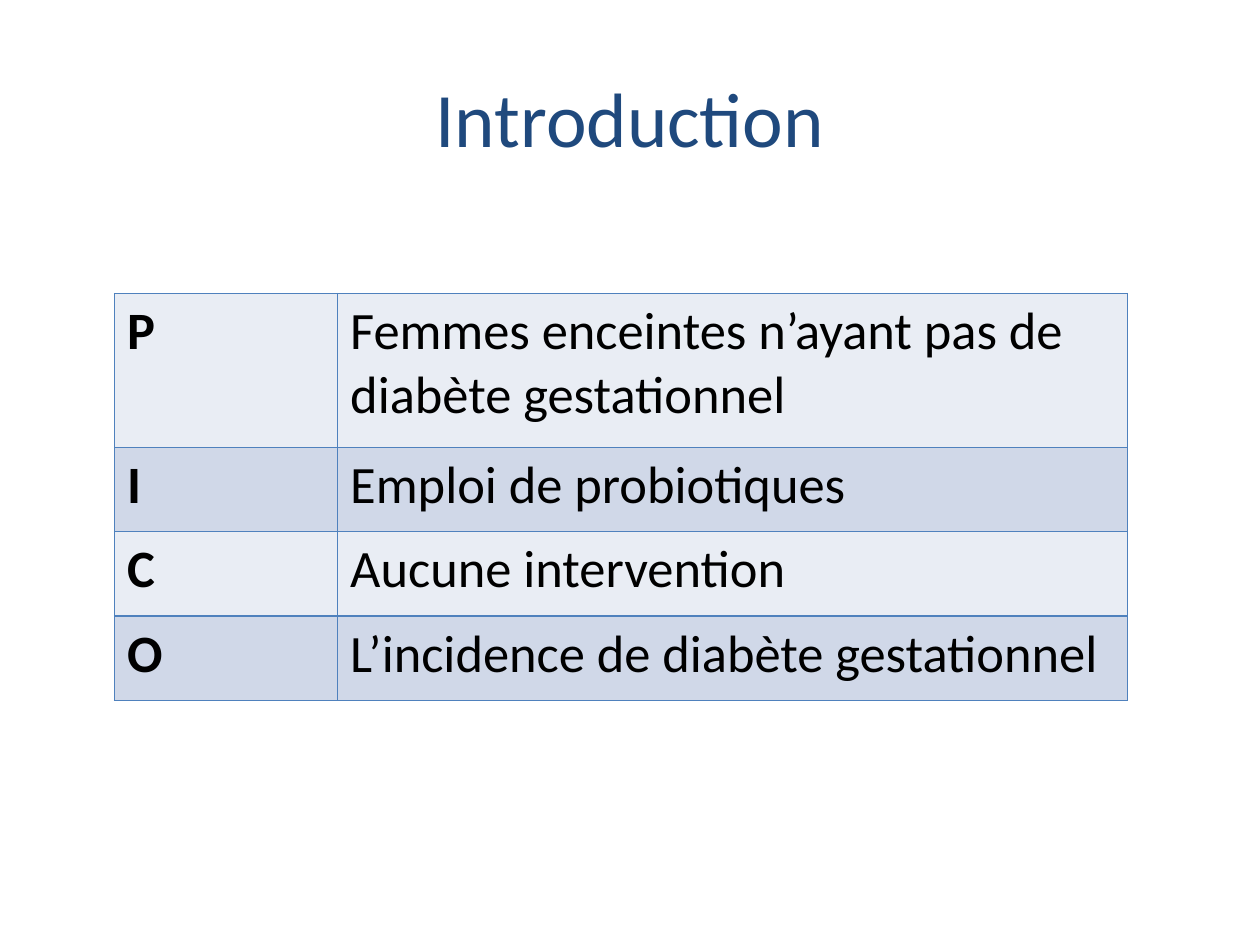
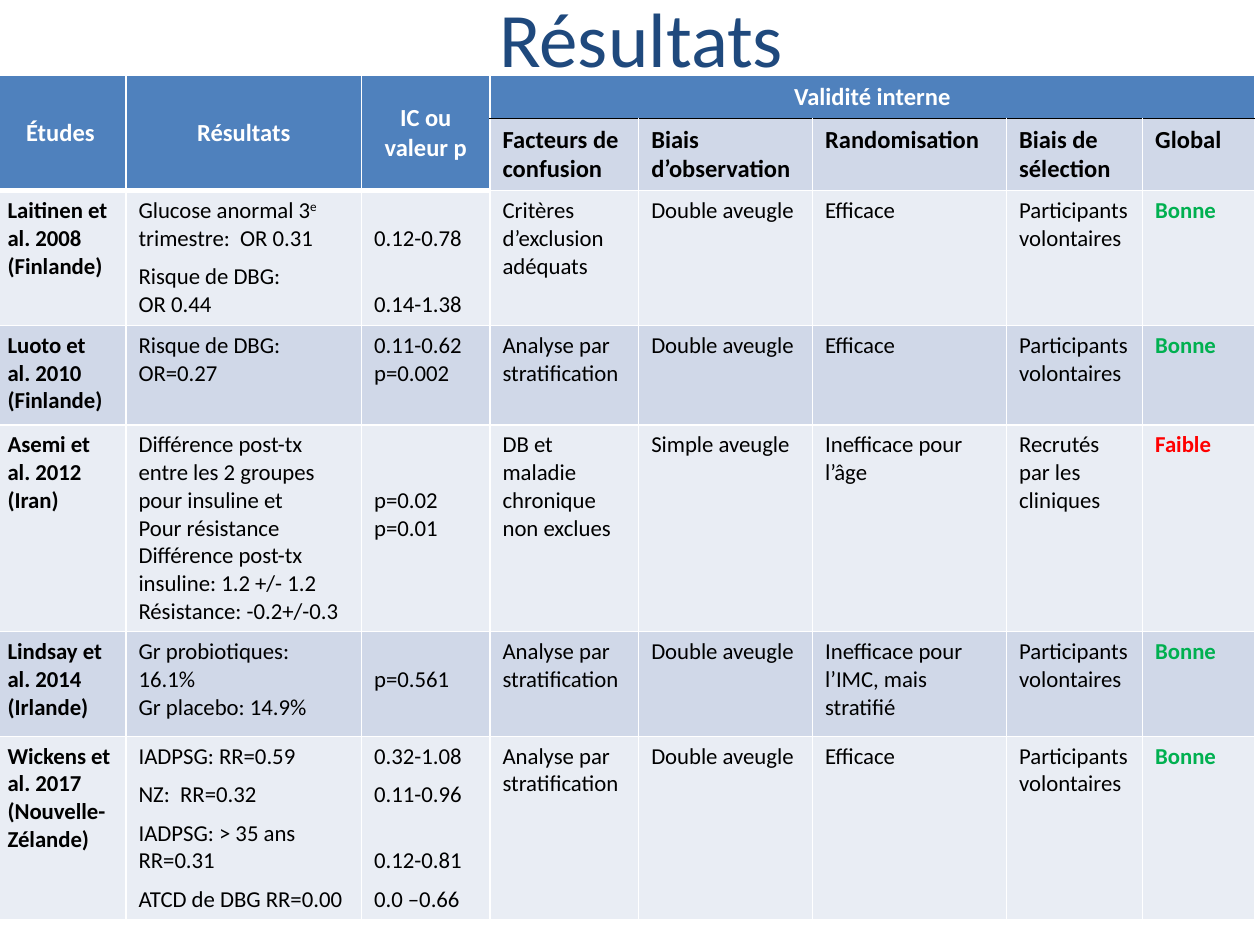
from typing import NamedTuple

from lxml.etree import SubElement
from pptx import Presentation
from pptx.dml.color import RGBColor
from pptx.enum.text import MSO_ANCHOR as Anchor, PP_ALIGN as Align
from pptx.oxml.ns import qn
from pptx.util import Inches, Pt

FONT = "Calibri"
NAVY, BLUE, BLACK, WHITE = "1F497D", "4F81BD", "000000", "FFFFFF"
GREEN, RED = "00B050", "FF0000"
BANDS = ("E9EDF4", "D0D8E8")
FULL_GAP, SMALL_GAP = 15.9, 6.1  # points: one line of body text, a thin break
CELL_TOP = 0.05


class Line(NamedTuple):
    text: str
    gap: float = 0


class Border(NamedTuple):
    color: str
    width: float = 1


class Study(NamedTuple):
    name: str
    country: str
    results: list[Line]
    intervals: list[Line]
    confounding: str
    observation: str
    randomisation: str
    selection: str
    overall: str


PICO = [
    ("P", "Femmes enceintes n’ayant pas de diabète gestationnel"),
    ("I", "Emploi de probiotiques"),
    ("C", "Aucune intervention"),
    ("O", "L’incidence de diabète gestationnel"),
]

MAIN_HEADS = ["Études", "Résultats", "IC ou\nvaleur p"]
VALIDITY_HEADS = ["Facteurs de confusion", "Biais d’observation", "Randomisation",
                  "Biais de sélection", "Global"]
STRATIFIED = "Analyse par stratification"
DOUBLE_BLIND = "Double aveugle"
VOLUNTEERS = "Participants volontaires"
GOOD, WEAK = "Bonne", "Faible"
RATING_COLORS = {GOOD: GREEN, WEAK: RED}

STUDIES = [
    Study("Laitinen et al. 2008", "(Finlande)",
          [Line("Glucose anormal 3^e^ trimestre:  OR 0.31"),
           Line("Risque de DBG:", SMALL_GAP), Line("OR 0.44")],
          [Line("0.12-0.78", FULL_GAP), Line("0.14-1.38", SMALL_GAP + FULL_GAP)],
          "Critères d’exclusion adéquats", DOUBLE_BLIND, "Efficace", VOLUNTEERS, GOOD),
    Study("Luoto et al. 2010", "(Finlande)",
          [Line("Risque de DBG: OR=0.27")],
          [Line("0.11-0.62"), Line("p=0.002")],
          STRATIFIED, DOUBLE_BLIND, "Efficace", VOLUNTEERS, GOOD),
    Study("Asemi et al. 2012", "(Iran)",
          [Line("Différence post-tx entre les 2 groupes pour insuline et"),
           Line("Pour résistance"),
           Line("Différence post-tx insuline: 1.2 +/- 1.2"),
           Line("Résistance: -0.2+/-0.3")],
          [Line("p=0.02", 2 * FULL_GAP), Line("p=0.01")],
          "DB et maladie chronique non exclues", "Simple aveugle",
          "Inefficace pour l’âge", "Recrutés par les cliniques", WEAK),
    Study("Lindsay et al. 2014", "(Irlande)",
          [Line("Gr probiotiques: 16.1%"), Line("Gr placebo: 14.9%")],
          [Line("p=0.561", FULL_GAP)],
          STRATIFIED, DOUBLE_BLIND, "Inefficace pour l’IMC, mais stratifié",
          VOLUNTEERS, GOOD),
    Study("Wickens et al. 2017", "(Nouvelle-Zélande)",
          [Line("IADPSG: RR=0.59"), Line("NZ:  RR=0.32", SMALL_GAP),
           Line("IADPSG: > 35 ans RR=0.31", SMALL_GAP),
           Line("ATCD de DBG RR=0.00", SMALL_GAP)],
          [Line("0.32-1.08"), Line("0.11-0.96", SMALL_GAP),
           Line("0.12-0.81", SMALL_GAP + FULL_GAP), Line("0.0 –0.66", SMALL_GAP)],
          STRATIFIED, DOUBLE_BLIND, "Efficace", VOLUNTEERS, GOOD),
]


def rgb(color: str) -> RGBColor:
    return RGBColor.from_string(color)


def write(tf, text: str | list[Line], *, size: float, color: str = BLACK,
          bold: bool = False, align=Align.LEFT) -> None:
    """Fill a text frame; a part between carets is set as superscript."""
    lines = [Line(t) for t in text.split("\n")] if isinstance(text, str) else text
    for i, line in enumerate(lines):
        p = tf.paragraphs[0] if i == 0 else tf.add_paragraph()
        p.alignment = align
        if i and line.gap:
            p.space_before = Pt(line.gap)
        for n, part in enumerate(line.text.split("^")):
            r = p.add_run()
            r.text = part
            font = r.font
            font.name, font.size, font.bold = FONT, Pt(size), bold
            font.color.rgb = rgb(color)
            if n % 2:
                font._element.set("baseline", "30000")


def add_titled_slide(prs, title: str, left: float, top: float, height: float):
    s = prs.slides.add_slide(prs.slide_layouts[5])
    sp = s.shapes.title
    sp.left, sp.top = Inches(left), Inches(top)
    sp.width, sp.height = Inches(9), Inches(height)
    sp.text_frame.vertical_anchor = Anchor.MIDDLE
    write(sp.text_frame, title, size=44, color=NAVY, align=Align.CENTER)
    return s


def add_plain_table(s, left: float, top: float, cols: list[float], rows: list[float]):
    frame = s.shapes.add_table(len(rows), len(cols), Inches(left), Inches(top),
                               Inches(sum(cols)), Inches(sum(rows)))
    table = frame.table
    table.first_row = table.horz_banding = False
    for col, width in zip(table.columns, cols):
        col.width = Inches(width)
    for row, height in zip(table.rows, rows):
        row.height = Inches(height)
    return table


def paint(cell, fill: str, border: Border, **sides: Border) -> None:
    """Set the borders (L, R, T, B may differ from the rest), then the fill."""
    tc_pr = cell._tc.get_or_add_tcPr()
    for side in "LRTB":
        color, width = sides.get(side, border)
        ln = SubElement(tc_pr, qn(f"a:ln{side}"), w=str(Pt(width)))
        SubElement(SubElement(ln, qn("a:solidFill")), qn("a:srgbClr"), val=color)
    cell.fill.solid()
    cell.fill.fore_color.rgb = rgb(fill)


def build_introduction(prs) -> None:
    s = add_titled_slide(prs, "Introduction", 0.5, 0.3, 1.25)
    table = add_plain_table(s, 0.91, 2.33, [1.77, 6.27], [1.22, 0.67, 0.67, 0.67])
    for i, row in enumerate(PICO):
        for j, text in enumerate(row):
            cell = table.cell(i, j)
            paint(cell, BANDS[i % 2], Border(BLUE))
            write(cell.text_frame, text, size=30, bold=j == 0)


def fill_headers(table) -> None:
    thin, rule, thick = Border(WHITE), Border(BLACK), Border(WHITE, 3)
    first = len(MAIN_HEADS)
    for j in range(len(table.columns)):
        upper, lower = table.cell(0, j), table.cell(1, j)
        if j < first:
            paint(upper, BLUE, thin, B=thick)
            paint(lower, BLUE, thin, B=thick)
            upper.merge(lower)
            upper.vertical_anchor = Anchor.MIDDLE
            write(upper.text_frame, MAIN_HEADS[j], size=14, color=WHITE, bold=True,
                  align=Align.CENTER)
        else:
            paint(upper, BLUE, thin, B=rule)
            paint(lower, BANDS[1], thin, T=rule)
            write(lower.text_frame, VALIDITY_HEADS[j - first], size=14, bold=True)
    validity = table.cell(0, first)
    validity.merge(table.cell(0, len(table.columns) - 1))
    write(validity.text_frame, "Validité interne", size=14, color=WHITE, bold=True,
          align=Align.CENTER)


def fill_study(table, row: int, study: Study) -> None:
    name, country, *values = study
    for j, text in enumerate([f"{name}\n{country}", *values]):
        cell = table.cell(row, j)
        paint(cell, BANDS[row % 2], Border(WHITE))
        if isinstance(text, list):
            cell.margin_top = Inches(CELL_TOP) + Pt(text[0].gap)
        is_rating = j == len(values)
        write(cell.text_frame, text, size=13, bold=j == 0 or is_rating,
              color=RATING_COLORS[text] if is_rating else BLACK)


def build_results(prs) -> None:
    s = add_titled_slide(prs, "Résultats", 0.59, -0.19, 0.96)
    table = add_plain_table(s, -0.04, 0.6,
                            [1.04, 1.87, 1.02, 1.18, 1.38, 1.54, 1.08, 0.89],
                            [0.34, 0.57, 1.07, 0.79, 1.64, 0.83, 1.45])
    fill_headers(table)
    for row, study in enumerate(STUDIES, start=2):
        fill_study(table, row, study)


def main() -> None:
    prs = Presentation()
    prs.slide_width, prs.slide_height = Inches(10), Inches(7.5)
    build_introduction(prs)
    build_results(prs)
    prs.save("out.pptx")


if __name__ == "__main__":
    main()
